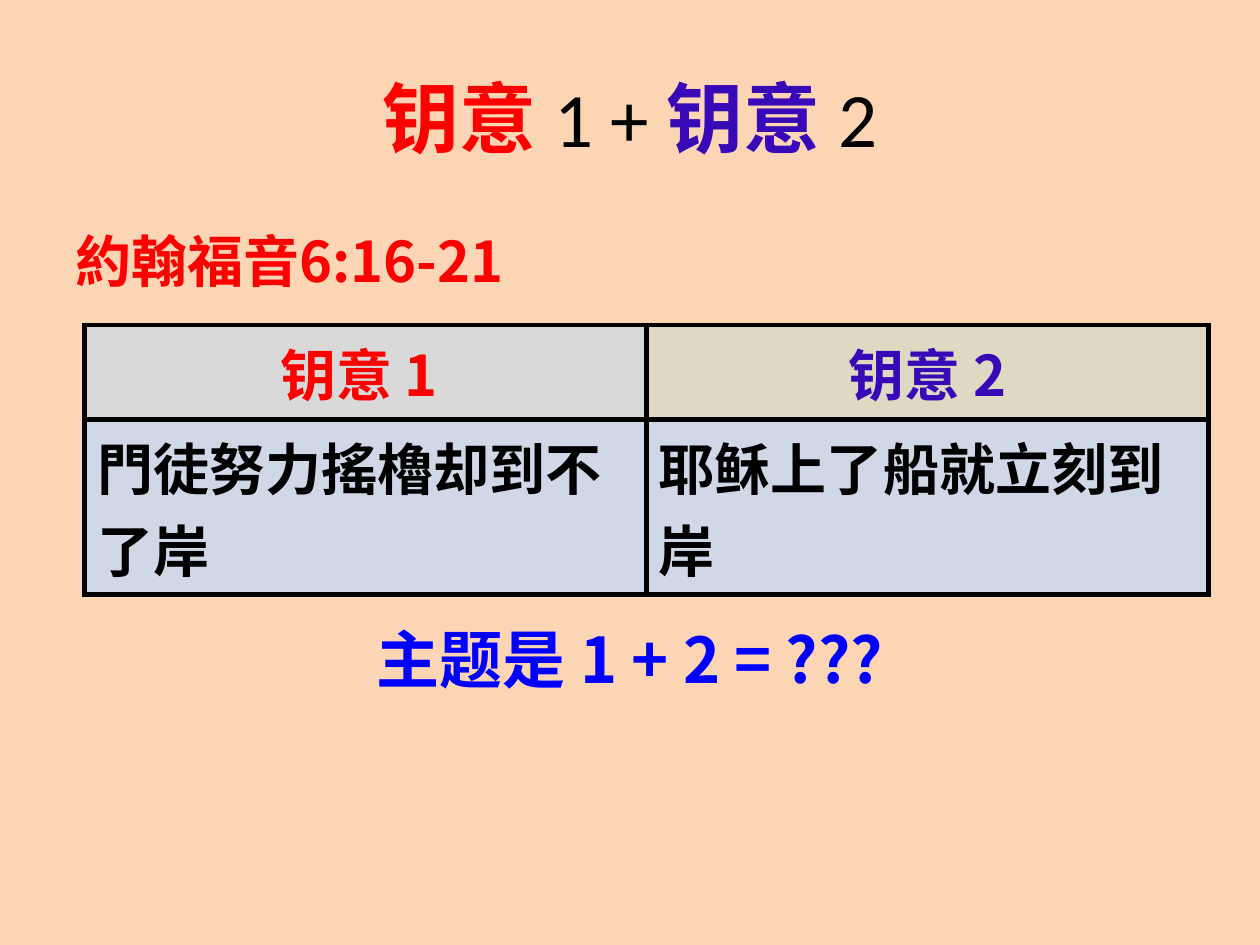
"""Build the slide that sets two key meanings side by side."""
import dataclasses

import lxml.etree
import pptx
import pptx.dml.color
import pptx.enum.text
import pptx.oxml.ns
import pptx.util

Inches = pptx.util.Inches
Pt = pptx.util.Pt
ALIGN = pptx.enum.text.PP_ALIGN
ANCHOR = pptx.enum.text.MSO_ANCHOR
qn = pptx.oxml.ns.qn


@dataclasses.dataclass(frozen=True)
class Theme:
    """Colours, fonts and type sizes."""
    bg: str = "FCD5B5"
    black: str = "000000"
    red: str = "FF0000"
    purple: str = "3709B7"
    blue: str = "0000FF"
    grey: str = "D9D9D9"
    tan: str = "DDD9C3"
    pale: str = "D0D8E8"
    cjk: str = "Noto Sans CJK SC"
    latin: str = "Calibri"
    title: int = 44
    topic: int = 36
    body: int = 32


@dataclasses.dataclass(frozen=True)
class Entry:
    """One table cell."""
    text: str
    color: str
    fill: str
    align: ALIGN = ALIGN.LEFT


T = Theme()
ROW_HEIGHTS = (0.75, 1.39)
ROWS = [
    [Entry("钥意 1 ", T.red, T.grey, ALIGN.CENTER),
     Entry("钥意 2", T.purple, T.tan, ALIGN.CENTER)],
    [Entry("門徒努力搖櫓却到不了岸", T.black, T.pale),
     Entry("耶稣上了船就立刻到岸", T.black, T.pale)],
]


def rgb(color: str) -> pptx.dml.color.RGBColor:
    """Return the colour object for a hex code."""
    return pptx.dml.color.RGBColor.from_string(color)


def add_text(p, text: str, *, color: str, size: int = T.body,
             font: str = T.cjk, bold: bool = True) -> None:
    """Add a formatted run to a paragraph."""
    r = p.add_run()
    r.text = text
    r.font.size = Pt(size)
    r.font.bold = bold
    r.font.color.rgb = rgb(color)
    r.font.name = font
    ea = lxml.etree.SubElement(r._r.get_or_add_rPr(), qn("a:ea"))
    ea.set("typeface", font)


def set_borders(cell, color: str, width: float) -> None:
    """Draw a solid line on all four sides of a cell."""
    tcPr = cell._tc.get_or_add_tcPr()
    for i, side in enumerate(("lnL", "lnR", "lnT", "lnB")):
        ln = lxml.etree.Element(qn(f"a:{side}"), w=str(Pt(width)))
        fill = lxml.etree.SubElement(ln, qn("a:solidFill"))
        lxml.etree.SubElement(fill, qn("a:srgbClr"), val=color)
        tcPr.insert(i, ln)


def add_title(s) -> None:
    """Fill the title with alternating key words and numbers."""
    sp = s.shapes.title
    sp.left, sp.top = Inches(0.5), Inches(0.3)
    sp.width, sp.height = Inches(9), Inches(1.25)
    sp.text_frame.vertical_anchor = ANCHOR.MIDDLE
    p = sp.text_frame.paragraphs[0]
    p.alignment = ALIGN.CENTER
    for color, number in ((T.red, "1 + "), (T.purple, "2")):
        add_text(p, "钥意 ", color=color, size=T.title)
        add_text(p, number, color=T.black, size=T.title, font=T.latin, bold=False)


def add_body(s) -> None:
    """Add the verse reference and the topic question."""
    sp = s.shapes.add_textbox(Inches(0.5), Inches(1.75), Inches(9), Inches(4.95))
    tf = sp.text_frame
    tf.word_wrap = True
    add_text(tf.paragraphs[0], "約翰福音6:16-21", color=T.red)
    p = tf.add_paragraph()
    p.alignment = ALIGN.CENTER
    p.space_before = Pt(186.5)
    add_text(p, "主题是 1 + 2 = ???", color=T.blue, size=T.topic)


def add_table(s, rows: list[list[Entry]]) -> None:
    """Add the comparison table."""
    table = s.shapes.add_table(len(rows), len(rows[0]), Inches(0.67), Inches(2.58),
                               Inches(8.92), Inches(sum(ROW_HEIGHTS))).table
    for row, height in zip(table.rows, ROW_HEIGHTS):
        row.height = Inches(height)
    for i, entries in enumerate(rows):
        for j, entry in enumerate(entries):
            cell = table.cell(i, j)
            cell.fill.solid()
            cell.fill.fore_color.rgb = rgb(entry.fill)
            set_borders(cell, T.black, 3)
            p = cell.text_frame.paragraphs[0]
            p.alignment = entry.align
            add_text(p, entry.text, color=entry.color)


def main() -> None:
    """Build and save the presentation."""
    prs = pptx.Presentation()
    prs.slide_width, prs.slide_height = Inches(10), Inches(7.5)
    s = prs.slides.add_slide(prs.slide_layouts[5])
    s.background.fill.solid()
    s.background.fill.fore_color.rgb = rgb(T.bg)
    add_title(s)
    add_body(s)
    add_table(s, ROWS)
    prs.save("out.pptx")


if __name__ == "__main__":
    main()
